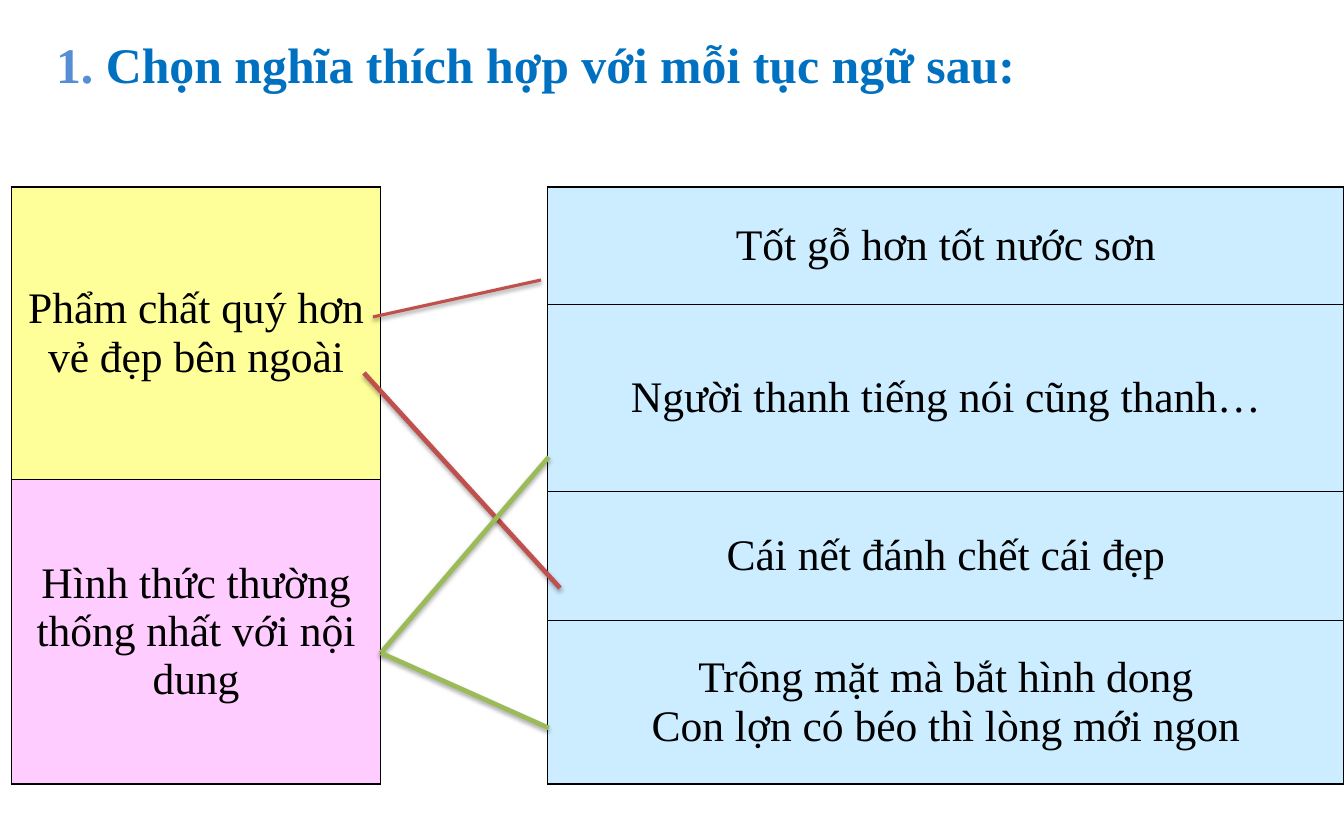
from lxml import etree
from pptx import Presentation
from pptx.dml.color import RGBColor
from pptx.enum.shapes import MSO_CONNECTOR
from pptx.enum.text import MSO_ANCHOR, MSO_AUTO_SIZE, PP_ALIGN
from pptx.oxml import parse_xml
from pptx.util import Inches, Pt

LEFT, CENTER = PP_ALIGN.LEFT, PP_ALIGN.CENTER
TOP, MIDDLE = MSO_ANCHOR.TOP, MSO_ANCHOR.MIDDLE
NO_AUTOFIT = MSO_AUTO_SIZE.NONE
STRAIGHT = MSO_CONNECTOR.STRAIGHT
TITLE_ONLY = 5
NS = 'xmlns:a="http://schemas.openxmlformats.org/drawingml/2006/main"'
YELLOW, PINK, SKY = "FFFF99", "FFCCFF", "CCECFF"
RED, GREEN = "C0504D", "9BBB59"


def rgb(value):
    return RGBColor.from_string(value)


def write(paragraph, text, size=28, color="000000", bold=False, align=CENTER, font="Times New Roman"):
    paragraph.alignment = align
    run = paragraph.add_run()
    run.text = text
    run.font.name = font
    run.font.size = Pt(size)
    run.font.bold = bold
    run.font.color.rgb = rgb(color)


class Board:
    """Draws the elements of a matching exercise on one slide."""

    border, border_width = "000000", Pt(1)

    def __init__(self, slide):
        self.slide = slide

    def title(self, left, top, width, height, parts):
        heading = self.slide.shapes.title
        heading.left, heading.top = Inches(left), Inches(top)
        heading.width, heading.height = Inches(width), Inches(height)
        frame = heading.text_frame
        frame.word_wrap = True
        frame.auto_size = NO_AUTOFIT
        frame.vertical_anchor = TOP
        for text, color in parts:
            write(frame.paragraphs[0], text, size=32, color=color, bold=True, align=LEFT)

    def outline(self, cell):
        properties = cell._tc.get_or_add_tcPr()
        for index, side in enumerate(("lnL", "lnR", "lnT", "lnB")):
            edge = parse_xml(
                f'<a:{side} {NS} w="{self.border_width}"><a:solidFill>'
                f'<a:srgbClr val="{self.border}"/></a:solidFill></a:{side}>')
            properties.insert(index, edge)

    def column(self, left, top, width, rows):
        height = sum(row_height for row_height, _, _ in rows)
        table = self.slide.shapes.add_table(
            len(rows), 1, Inches(left), Inches(top), Inches(width), Inches(height)).table
        table.first_row = table.horz_banding = False
        for index, (row_height, fill, lines) in enumerate(rows):
            table.rows[index].height = Inches(row_height)
            cell = table.cell(index, 0)
            cell.fill.solid()
            cell.fill.fore_color.rgb = rgb(fill)
            cell.vertical_anchor = MIDDLE
            cell.margin_left = cell.margin_right = Inches(0.12)
            cell.margin_top = cell.margin_bottom = Inches(0.05)
            self.outline(cell)
            frame = cell.text_frame
            for number, line in enumerate(lines):
                write(frame.add_paragraph() if number else frame.paragraphs[0], line)

    def match(self, start, end, color, width=3, distance=1.8, opacity=35):
        link = self.slide.shapes.add_connector(STRAIGHT, *map(Inches, (*start, *end)))
        link.line.color.rgb = rgb(color)
        link.line.width = Pt(width)
        effects = etree.fromstring(
            f'<a:effectLst {NS}><a:outerShdw blurRad="{Pt(3.1)}" dist="{Pt(distance)}" '
            f'dir="5400000" rotWithShape="0"><a:srgbClr val="000000">'
            f'<a:alpha val="{opacity * 1000}"/></a:srgbClr></a:outerShdw></a:effectLst>')
        link._element.spPr.append(effects)


def main():
    deck = Presentation()
    deck.slide_width, deck.slide_height = Inches(12), Inches(7.5)
    board = Board(deck.slides.add_slide(deck.slide_layouts[TITLE_ONLY]))

    board.title(0.4, 0.25, 10.66, 2.17, [
        ("1. ", "558ED5"),
        ("Chọn nghĩa thích hợp với mỗi tục ngữ sau:", "0070C0"),
    ])

    tables_top = 1.67
    board.column(0.1, tables_top, 3.3, [
        (2.61, YELLOW, ["Phẩm chất quý hơn vẻ đẹp bên ngoài"]),
        (2.72, PINK, ["Hình thức thường thống nhất với nội dung"]),
    ])
    board.column(4.89, tables_top, 7.11, [
        (1.05, SKY, ["Tốt gỗ hơn tốt nước sơn"]),
        (1.67, SKY, ["Người thanh tiếng nói cũng thanh…"]),
        (1.15, SKY, ["Cái nết đánh chết cái đẹp"]),
        (1.46, SKY, ["Trông mặt mà bắt hình dong", "Con lợn có béo thì lòng mới ngon"]),
    ])

    board.match((3.33, 2.83), (4.83, 2.5), RED, width=2, distance=1.6, opacity=38)
    board.match((3.25, 3.33), (5, 5.25), RED)
    form_meaning = (3.4, 5.83)
    for proverb in ((4.9, 4.08), (4.9, 6.5)):
        board.match(form_meaning, proverb, GREEN)

    deck.save("out.pptx")


if __name__ == "__main__":
    main()
